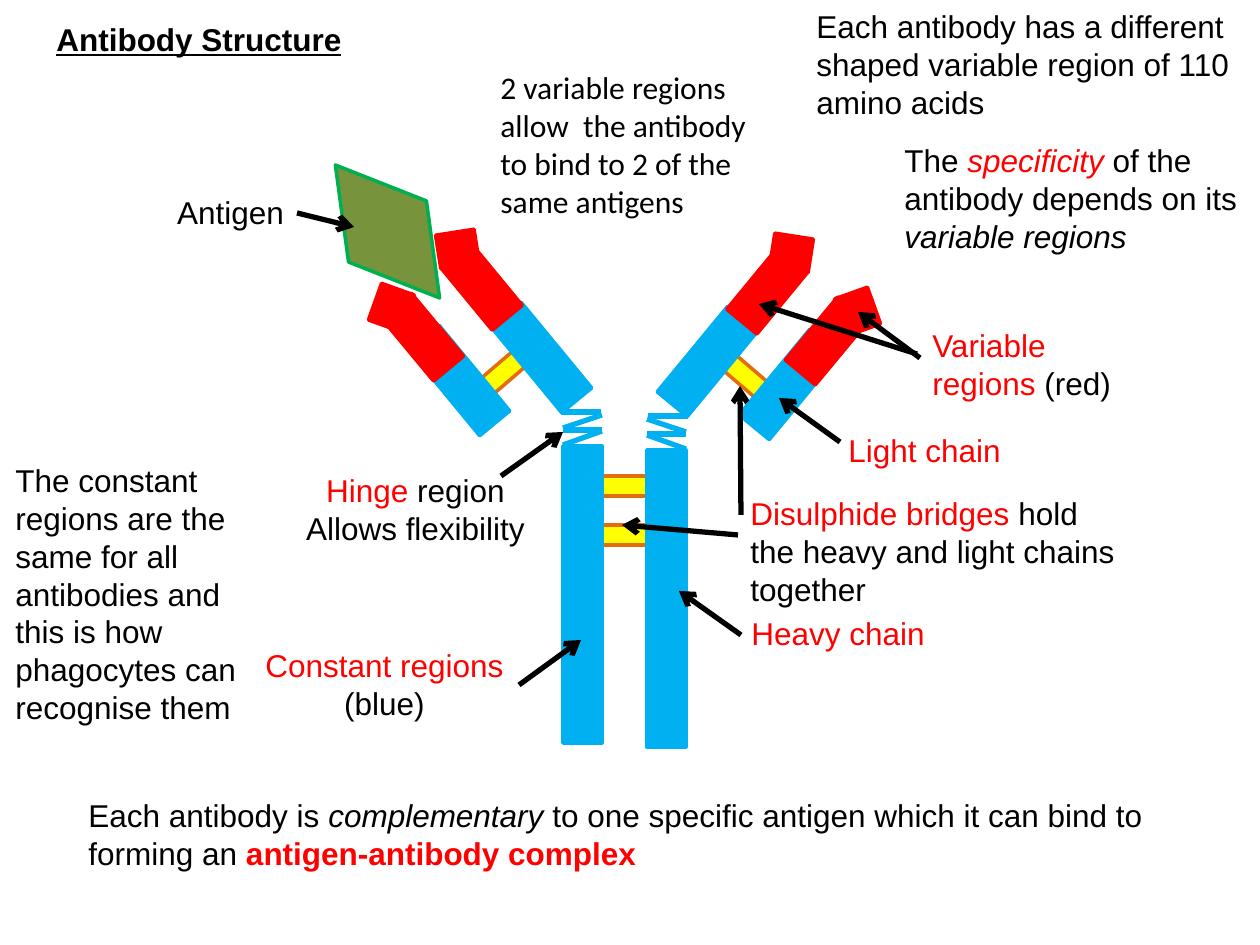
from dataclasses import dataclass

from lxml.etree import SubElement
from pptx import Presentation
from pptx.dml.color import RGBColor as Rgb
from pptx.enum.shapes import MSO_CONNECTOR as Connector, MSO_SHAPE as Shape
from pptx.enum.text import MSO_ANCHOR as Anchor, MSO_AUTO_SIZE as AutoSize, PP_ALIGN as Align
from pptx.oxml.ns import qn
from pptx.util import Emu, Pt

PX = 914400 / 126
MIRROR_SUM = 1249
RIGHT_DROP = 4


@dataclass(frozen=True)
class Theme:
    constant: str = "00B0F0"
    variable: str = "FF0000"
    bridge: str = "FFFF00"
    bridge_edge: str = "E46C0A"
    antigen: str = "77933C"
    antigen_edge: str = "00B050"
    ink: str = "000000"
    key: str = "FF0000"
    font: str = "Arial"
    alt_font: str = "Calibri"
    text_size: int = 18
    edge: int = 2
    stroke: int = 3


THEME = Theme()
PLAIN = {}
KEY = {"color": THEME.key}
ITALIC = {"italic": True}

BRIDGE = (THEME.bridge, THEME.bridge_edge)
CONSTANT = (THEME.constant, THEME.constant)
VARIABLE = (THEME.variable, THEME.variable)

STEM_BRIDGES = [(593, 525, 59, 20), (593, 476, 59, 20)]
HALF = [
    ((472, 364, 59, 20), 319.4, BRIDGE),
    ((522, 302, 39, 111), 320.5, CONSTANT),
    ((462, 246, 39, 81), 320.5, VARIABLE),
    ((438, 232, 39, 34), 351.1, VARIABLE),
    ((440, 325, 39, 111), 320.5, CONSTANT),
    ((563, 446, 39, 297), 0, CONSTANT),
    ((403, 296, 39, 82), 320.3, VARIABLE),
    ((372, 290, 39, 35), 289.7, VARIABLE),
]
HINGE = [
    ((561, 412), (601, 412)),
    ((563, 430), (602, 430)),
    ((563, 428), (602, 415)),
    ((563, 445), (602, 431)),
]
POINTERS = [
    ((519, 685), (581, 640)),
    ((741, 635), (679, 591)),
    ((501, 476), (563, 432)),
    ((297, 213), (354, 227)),
    ((920, 358), (858, 312)),
    ((840, 442), (779, 398)),
    ((917, 354), (759, 304)),
]
BRIDGE_POINTERS = [((738, 535), (622, 525)), ((741, 515), (740, 386))]
BRIDGE_LABEL = ((738, 488, 403, 127), [(Align.LEFT, [
    ("Disulphide bridges ", KEY),
    ("hold the heavy and light chains together", PLAIN)])], True)

TITLE = ((42, 14, 314, 50), [(Align.CENTER, [
    ("Antibody Structure", {"bold": True, "underline": True})])], False)
LABELS = [
    ((292, 465, 247, 89), [
        (Align.CENTER, [("Hinge", KEY), (" region", PLAIN)]),
        (Align.CENTER, [("Allows flexibility", PLAIN)])], False),
    ((253, 640, 266, 89), [
        (Align.LEFT, [("Constant regions", KEY)]),
        (Align.CENTER, [("(blue)", PLAIN)])], False),
    ((739, 608, 200, 50), [(Align.LEFT, [("Heavy chain", KEY)])], False),
    ((836, 425, 179, 50), [(Align.LEFT, [("Light chain", KEY)])], False),
    ((920, 320, 238, 89), [(Align.LEFT, [
        ("Variable regions ", KEY), ("(red)", PLAIN)])], True),
    ((164, 187, 133, 50), [(Align.CENTER, [("Antigen", PLAIN)])], False),
    ((3, 455, 268, 280), [(Align.LEFT, [
        ("The constant regions are the same for all antibodies and this is "
         "how phagocytes can recognise them", PLAIN)])], True),
    ((892, 135, 389, 127), [(Align.LEFT, [
        ("The ", PLAIN), ("specificity ", {**KEY, **ITALIC}),
        ("of the antibody depends on its ", PLAIN),
        ("variable regions", ITALIC)])], True),
    ((804, 1, 466, 127), [(Align.LEFT, [
        ("Each antibody has a different shaped variable region of 110 amino acids",
         PLAIN)])], True),
    ((76, 790, 1191, 89), [(Align.LEFT, [
        ("Each antibody is ", PLAIN), ("complementary", ITALIC),
        (" to one specific antigen which it can bind to forming an ", PLAIN),
        ("antigen-antibody complex", {**KEY, "bold": True})])], True),
    ((488, 62, 286, 165), [(Align.LEFT, [
        ("2 variable regions allow  the antibody to bind to 2 of the  same antigens",
         {"name": THEME.alt_font})])], True),
]


def px(*lengths):
    return [Emu(round(length * PX)) for length in lengths]


def apply(target, values):
    for name, value in values.items():
        setattr(target, name, value)


def write(frame, paragraphs, wrap):
    apply(frame, {"word_wrap": wrap, "auto_size": AutoSize.SHAPE_TO_FIT_TEXT,
                  "vertical_anchor": Anchor.TOP})
    for index, (alignment, pieces) in enumerate(paragraphs):
        paragraph = frame.add_paragraph() if index else frame.paragraphs[0]
        paragraph.alignment = alignment
        for words, look in pieces:
            run = paragraph.add_run()
            run.text = words
            values = {"name": THEME.font, "size": Pt(THEME.text_size), **look}
            run.font.color.rgb = Rgb.from_string(values.pop("color", THEME.ink))
            apply(run.font, values)


def add_title(slide, box, paragraphs, wrap):
    title = slide.shapes.title
    apply(title, dict(zip(("left", "top", "width", "height"), px(*box))))
    write(title.text_frame, paragraphs, wrap)


def add_label(shapes, box, paragraphs, wrap):
    write(shapes.add_textbox(*px(*box)).text_frame, paragraphs, wrap)


def add_part(shapes, box, rotation, colors, kind=Shape.RECTANGLE):
    part = shapes.add_shape(kind, *px(*box))
    part.rotation = rotation
    part.shadow.inherit = False
    fill, edge = colors
    part.fill.solid()
    part.fill.fore_color.rgb = Rgb.from_string(fill)
    part.line.color.rgb = Rgb.from_string(edge)
    part.line.width = Pt(THEME.edge)


def add_stroke(shapes, start, end, color, arrow=False):
    stroke = shapes.add_connector(Connector.STRAIGHT, *px(*start, *end))
    stroke.line.color.rgb = Rgb.from_string(color)
    stroke.line.width = Pt(THEME.stroke)
    if arrow:
        SubElement(stroke.line._get_or_add_ln(), qn("a:tailEnd"), type="arrow")
    SubElement(stroke._element.spPr, qn("a:effectLst"))


def add_half(shapes, mirrored):
    drop = RIGHT_DROP if mirrored else 0
    for (x, y, w, h), rotation, colors in HALF:
        left = MIRROR_SUM - x - w if mirrored else x
        turn = -rotation % 360 if mirrored else rotation
        add_part(shapes, (left, y + drop, w, h), turn, colors)
    for ends in HINGE:
        start, end = [(MIRROR_SUM - x if mirrored else x, y + drop) for x, y in ends]
        add_stroke(shapes, start, end, THEME.constant)


def add_antibody(slide):
    shapes = slide.shapes.add_group_shape().shapes
    for box in STEM_BRIDGES:
        add_part(shapes, box, 0, BRIDGE)
    for mirrored in (False, True):
        add_half(shapes, mirrored)


def add_bridge_note(slide):
    shapes = slide.shapes.add_group_shape().shapes
    add_label(shapes, *BRIDGE_LABEL)
    for start, end in BRIDGE_POINTERS:
        add_stroke(shapes, start, end, THEME.ink, arrow=True)


def main():
    deck = Presentation()
    deck.slide_width, deck.slide_height = px(1260, 945)
    slide = deck.slides.add_slide(deck.slide_layouts[5])
    add_title(slide, *TITLE)
    add_antibody(slide)
    add_part(slide.shapes, (338, 147, 99, 169), 321.9,
             (THEME.antigen, THEME.antigen_edge), Shape.DIAMOND)
    for label in LABELS:
        add_label(slide.shapes, *label)
    add_bridge_note(slide)
    for start, end in POINTERS:
        add_stroke(slide.shapes, start, end, THEME.ink, arrow=True)
    deck.save("out.pptx")


if __name__ == "__main__":
    main()
